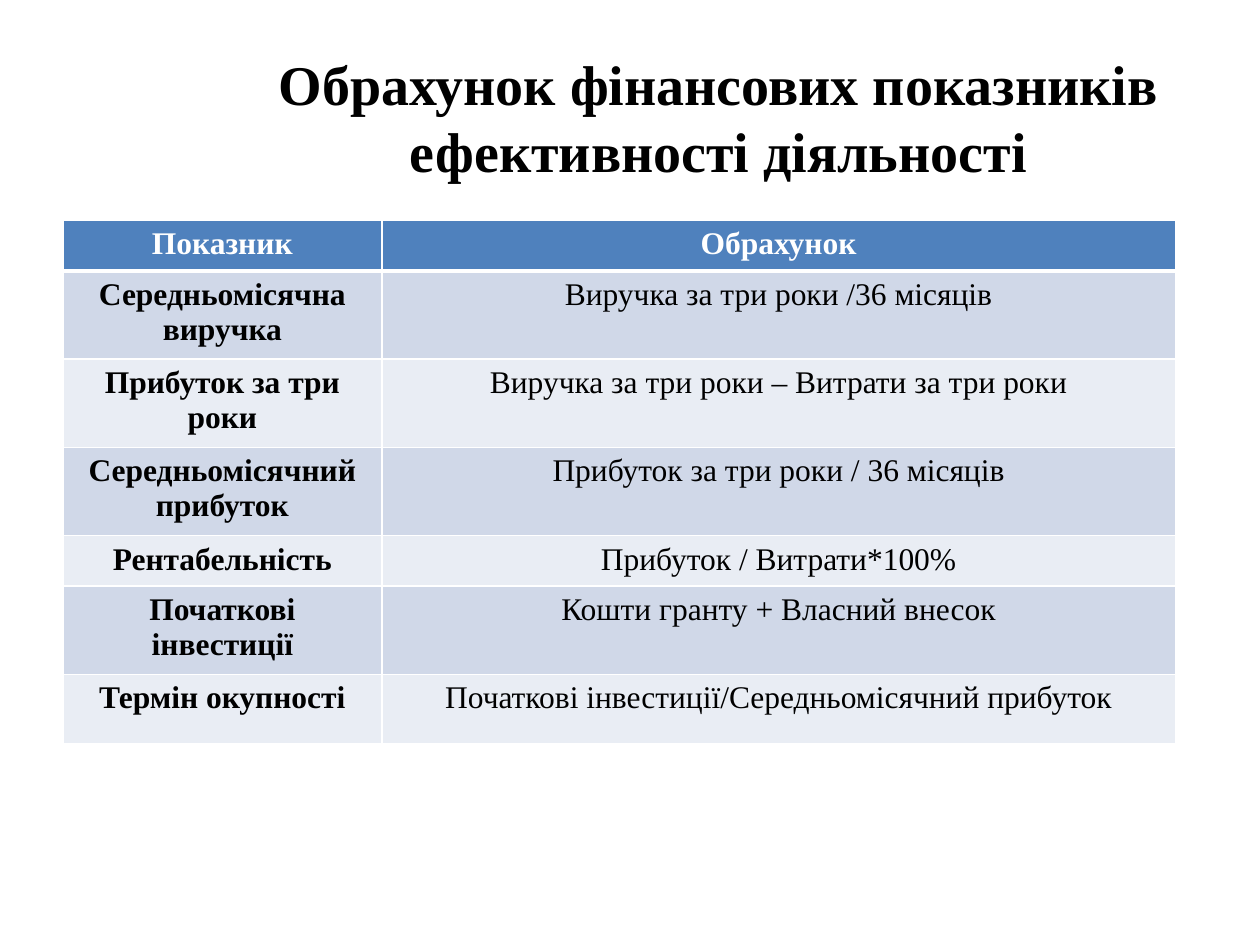
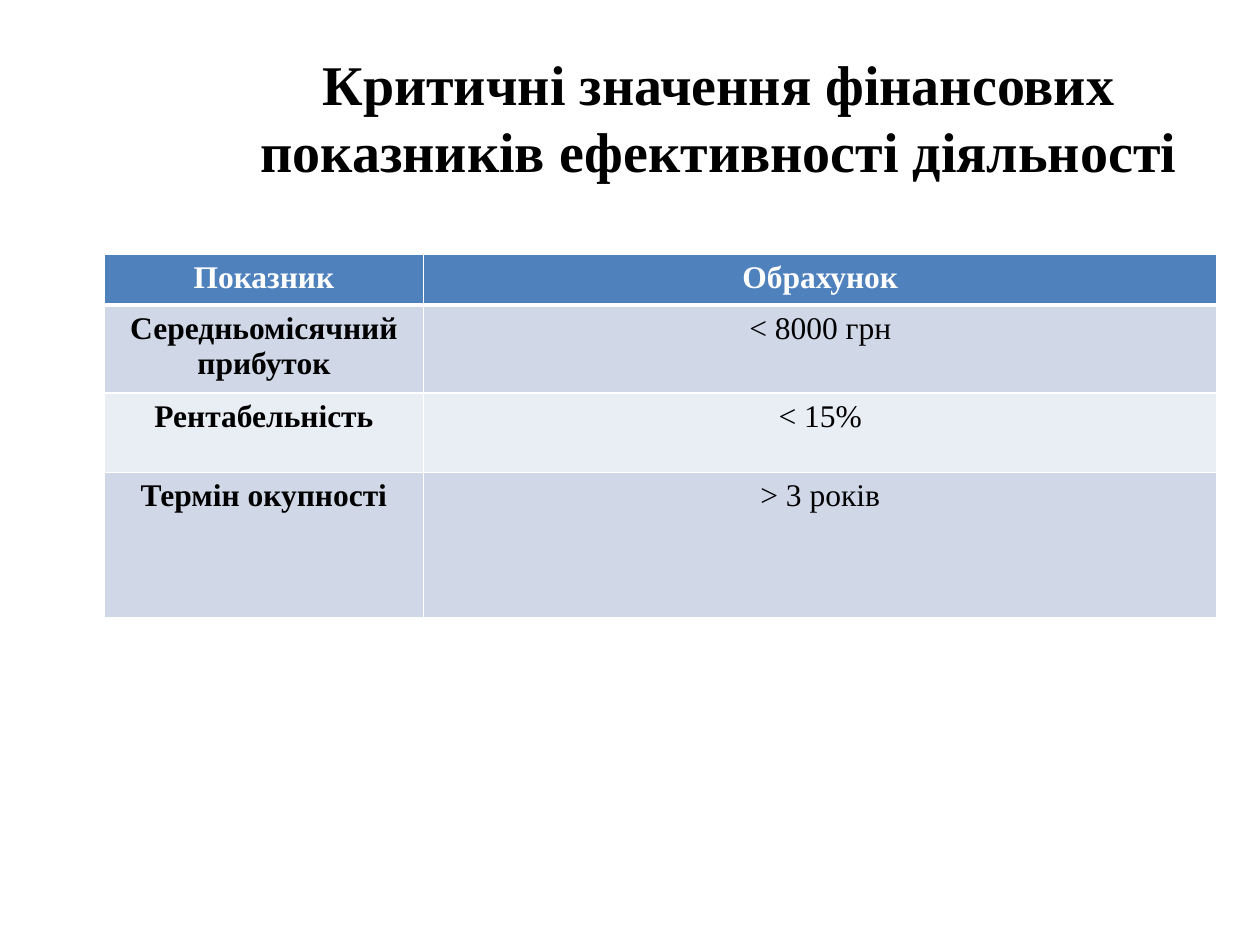
from dataclasses import dataclass

from lxml import etree
from pptx import Presentation
from pptx.dml.color import RGBColor
from pptx.enum.text import MSO_ANCHOR, PP_ALIGN
from pptx.oxml.ns import qn
from pptx.util import Inches, Pt

CENTER = PP_ALIGN.CENTER
MIDDLE = MSO_ANCHOR.MIDDLE
SLIDE_WIDTH, SLIDE_HEIGHT = Inches(10), Inches(7.5)
BLANK_LAYOUT = 6


@dataclass(frozen=True)
class Theme:
    """Fonts, type sizes, colours and rule widths of the deck."""
    font: str = "Times New Roman"
    title_size: int = 32
    cell_size: int = 18
    ink: str = "000000"
    white: str = "FFFFFF"
    header: str = "4F81BD"
    bands: tuple = ("D0D8E8", "E9EDF4")
    thin_rule: int = 1
    header_rule: int = 3


@dataclass(frozen=True)
class Box:
    """A region in percent of the slide's width and height."""
    left: float
    top: float
    width: float
    height: float

    def emu(self):
        """Return left, top, width and height as slide lengths."""
        return (across(self.left), down(self.top),
                across(self.width), down(self.height))


THEME = Theme()
TITLE_BOX = Box(16.9, 4, 80.3, 16.67)
TABLE_WIDTH = 88.3
COLUMN_WEIGHTS = (2.53, 6.3)
ONE_LINE, TWO_LINES = 5, 8.8
HEADINGS = ("Показник", "Обрахунок")

CALCULATIONS = [
    ("Середньомісячна виручка", "Виручка за три роки /36 місяців", TWO_LINES),
    ("Прибуток за три роки", "Виручка за три роки – Витрати за три роки", TWO_LINES),
    ("Середньомісячний прибуток", "Прибуток за три роки / 36 місяців", TWO_LINES),
    ("Рентабельність", "Прибуток / Витрати*100%", ONE_LINE),
    ("Початкові інвестиції", "Кошти гранту + Власний внесок", TWO_LINES),
    ("Термін окупності", "Початкові інвестиції/Середньомісячний прибуток", 7.33),
]
CRITICAL_VALUES = [
    ("Середньомісячний прибуток", "< 8000 грн", TWO_LINES),
    ("Рентабельність", "< 15%", 8.4),
    ("Термін окупності", "> 3 років", 15.33),
]


def across(percent):
    """Convert a percentage of the slide width to a length."""
    return round(SLIDE_WIDTH * percent / 100)


def down(percent):
    """Convert a percentage of the slide height to a length."""
    return round(SLIDE_HEIGHT * percent / 100)


def write(frame, text, size, color, bold):
    """Set one centred paragraph in the deck's font."""
    frame.text = text
    paragraph = frame.paragraphs[0]
    paragraph.alignment = CENTER
    font = paragraph.runs[0].font
    font.name, font.size, font.bold = THEME.font, Pt(size), bold
    font.color.rgb = RGBColor.from_string(color)


def add_title(slide, box, text):
    """Place the slide title in its box."""
    frame = slide.shapes.add_textbox(*box.emu()).text_frame
    frame.word_wrap = True
    frame.vertical_anchor = MIDDLE
    write(frame, text, THEME.title_size, THEME.ink, True)


def add_borders(cell, top, bottom):
    """Draw white rules on all four sides of a cell."""
    properties = cell._tc.get_or_add_tcPr()
    widths = {"lnL": THEME.thin_rule, "lnR": THEME.thin_rule, "lnT": top, "lnB": bottom}
    for side, width in widths.items():
        rule = etree.SubElement(properties, qn(f"a:{side}"), w=str(Pt(width)))
        fill = etree.SubElement(rule, qn("a:solidFill"))
        etree.SubElement(fill, qn("a:srgbClr"), val=THEME.white)


def style_cell(cell, row, column, text):
    """Fill, rule and write one cell by its place in the table."""
    is_header = row == 0
    add_borders(cell,
                THEME.header_rule if row == 1 else THEME.thin_rule,
                THEME.header_rule if is_header else THEME.thin_rule)
    cell.fill.solid()
    fill = THEME.header if is_header else THEME.bands[(row - 1) % 2]
    cell.fill.fore_color.rgb = RGBColor.from_string(fill)
    write(cell.text_frame, text, THEME.cell_size,
          THEME.white if is_header else THEME.ink, is_header or column == 0)


def add_indicators(slide, box, rows):
    """Place the table of indicators, each row at its own height."""
    table = slide.shapes.add_table(len(rows), len(HEADINGS), *box.emu()).table
    for column, weight in zip(table.columns, COLUMN_WEIGHTS):
        column.width = across(box.width * weight / sum(COLUMN_WEIGHTS))
    for row, (*texts, height) in enumerate(rows):
        table.rows[row].height = down(height)
        for column, text in enumerate(texts):
            style_cell(table.cell(row, column), row, column, text)


def add_indicator_slide(deck, title, left, top, indicators):
    """Add a slide with a title and a table of indicators."""
    slide = deck.slides.add_slide(deck.slide_layouts[BLANK_LAYOUT])
    add_title(slide, TITLE_BOX, title)
    rows = [(*HEADINGS, ONE_LINE), *indicators]
    height = sum(row[-1] for row in rows)
    add_indicators(slide, Box(left, top, TABLE_WIDTH, height), rows)


def main():
    """Build and save the deck."""
    deck = Presentation()
    deck.slide_width, deck.slide_height = SLIDE_WIDTH, SLIDE_HEIGHT
    add_indicator_slide(deck, "Обрахунок фінансових показників ефективності діяльності",
                        5, 23.33, CALCULATIONS)
    add_indicator_slide(deck, "Критичні значення фінансових показників ефективності діяльності",
                        8.3, 26.93, CRITICAL_VALUES)
    deck.save("out.pptx")


if __name__ == "__main__":
    main()
